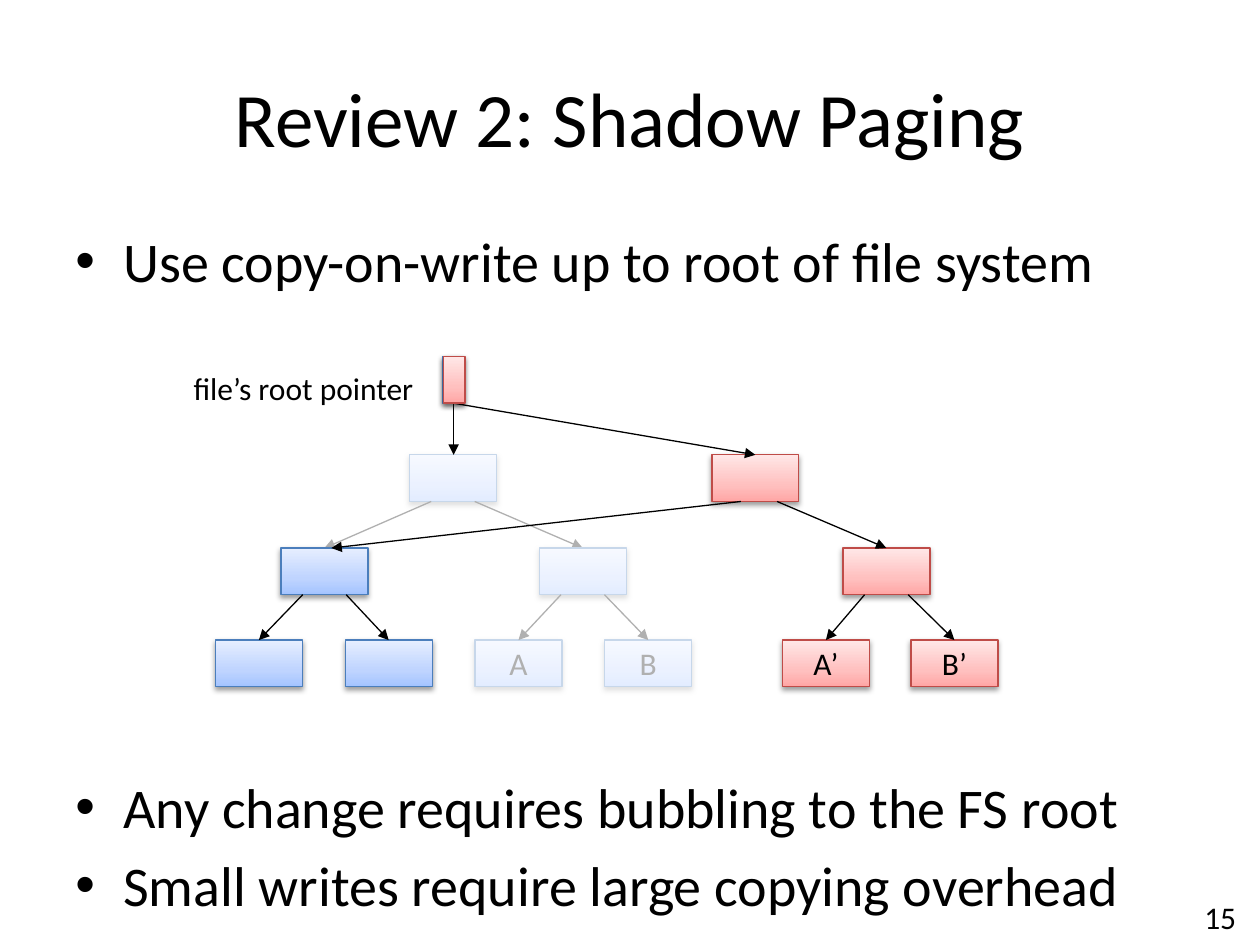
import pptx
import pptx.util
import pptx.dml.color
import pptx.enum.shapes
import pptx.enum.text
import pptx.oxml
import pptx.oxml.ns
from lxml import etree

Inches = pptx.util.Inches
Pt = pptx.util.Pt
RGBColor = pptx.dml.color.RGBColor
Align = pptx.enum.text.PP_ALIGN
Anchor = pptx.enum.text.MSO_ANCHOR
qn = pptx.oxml.ns.qn

FONT = "Calibri"
BLACK = RGBColor(0x00, 0x00, 0x00)
WHITE = RGBColor(0xFF, 0xFF, 0xFF)

# Palettes: border, then gradient from bottom to top
BLUE = (RGBColor(0x4B, 0x7E, 0xBC),
        (RGBColor(0xA4, 0xC4, 0xFF), RGBColor(0xBF, 0xD4, 0xFF), RGBColor(0xE6, 0xEE, 0xFF)))
RED = (RGBColor(0xBF, 0x4C, 0x48),
       (RGBColor(0xFF, 0xA6, 0xA5), RGBColor(0xFF, 0xC0, 0xBF), RGBColor(0xFF, 0xE7, 0xE7)))
GRADIENT_POSITIONS = (0, 35000, 100000)

# Tree geometry in inches; level 0 holds the root pointer
LEVEL_TOPS = (2.83, 3.61, 4.35, 5.08)
NODE_WIDTH, NODE_HEIGHT = 0.69, 0.37
POINTER_WIDTH = 0.17
POINTER_CENTER = 3.6


def write_paragraph(paragraph, text, size, alignment):
    paragraph.text = text
    paragraph.alignment = alignment
    paragraph.font.name = FONT
    paragraph.font.size = Pt(size)
    paragraph.font.color.rgb = BLACK


def add_bullet(paragraph):
    properties = paragraph._p.get_or_add_pPr()
    properties.set("marL", str(Inches(0.38)))
    properties.set("indent", str(-Inches(0.38)))
    spacing = etree.Element(qn("a:spcBef"))
    etree.SubElement(spacing, qn("a:spcPct"), val="20000")
    properties.insert(0, spacing)
    spacing.addnext(etree.Element(qn("a:buFont"), typeface="Arial"))
    spacing.getnext().addnext(etree.Element(qn("a:buChar"), char="•"))


def add_text(slide, box, lines, size, alignment=Align.LEFT,
             anchor=Anchor.TOP, bullets=False, wrap=True):
    frame = slide.shapes.add_textbox(*map(Inches, box)).text_frame
    frame.word_wrap = wrap
    frame.vertical_anchor = anchor
    for index, line in enumerate(lines):
        paragraph = frame.add_paragraph() if index else frame.paragraphs[0]
        write_paragraph(paragraph, line, size, alignment)
        if bullets:
            add_bullet(paragraph)


def add_rectangle(slide, left, top, width, height):
    shape = slide.shapes.add_shape(
        pptx.enum.shapes.MSO_SHAPE.RECTANGLE, *map(Inches, (left, top, width, height)))
    shape.shadow.inherit = False
    return shape


def fill_gradient(shape, colors):
    shape.fill.gradient()
    shape.fill.gradient_angle = 90
    stops = shape._element.spPr.find(".//" + qn("a:gsLst"))
    stops.clear()
    for position, color in zip(GRADIENT_POSITIONS, colors):
        stop = etree.SubElement(stops, qn("a:gs"), pos=str(position))
        etree.SubElement(stop, qn("a:srgbClr"), val=str(color))


def add_shadow(shape):
    effects = shape._element.spPr.find(qn("a:effectLst"))
    shadow = etree.SubElement(effects, qn("a:outerShdw"), blurRad=str(Pt(3.1)),
                              dist=str(Pt(1.6)), dir="5400000", rotWithShape="0")
    color = etree.SubElement(shadow, qn("a:srgbClr"), val=str(BLACK))
    etree.SubElement(color, qn("a:alpha"), val="38000")


def add_node(slide, left, level, palette, label="", width=NODE_WIDTH):
    border, colors = palette
    shape = add_rectangle(slide, left, LEVEL_TOPS[level], width, NODE_HEIGHT)
    fill_gradient(shape, colors)
    shape.line.color.rgb = border
    shape.line.width = Pt(0.75)
    add_shadow(shape)
    if label:
        shape.text_frame.vertical_anchor = Anchor.MIDDLE
        write_paragraph(shape.text_frame.paragraphs[0], label, 18, Align.CENTER)


def add_arrow(slide, start_x, level, end_x):
    """Arrow from the bottom of one level to the top of the next."""
    connector = slide.shapes.add_connector(
        pptx.enum.shapes.MSO_CONNECTOR.STRAIGHT,
        Inches(start_x), Inches(LEVEL_TOPS[level] + NODE_HEIGHT),
        Inches(end_x), Inches(LEVEL_TOPS[level + 1]))
    connector.line.color.rgb = BLACK
    connector.line.width = Pt(0.75)
    etree.SubElement(connector.line._get_or_add_ln(), qn("a:tailEnd"), type="triangle")
    etree.SubElement(connector._element.spPr, qn("a:effectLst"))


def add_branch(slide, parent, level, fraction, child):
    add_arrow(slide, parent + fraction * NODE_WIDTH, level, child + NODE_WIDTH / 2)


def add_subtree(slide, parent, children, palette, labels=("", "")):
    """Level 2 node with its two leaves."""
    add_node(slide, parent, 2, palette)
    for child, label, fraction in zip(children, labels, (0.25, 0.75)):
        add_node(slide, child, 3, palette, label)
        add_branch(slide, parent, 2, fraction, child)


def add_veil(slide):
    veil = add_rectangle(slide, 2.29, 3.58, 3.42, 2.17)
    veil.fill.solid()
    veil.fill.fore_color.rgb = WHITE
    color = veil._element.spPr.find(".//" + qn("a:srgbClr"))
    etree.SubElement(color, qn("a:alpha"), val="69000")
    veil.line.fill.background()


def add_tree(slide):
    old_root, new_root = 3.25, 5.65
    kept, replaced, new = 2.23, 4.28, 6.69

    # Old version, faded by the veil
    add_node(slide, old_root, 1, BLUE)
    add_branch(slide, old_root, 1, 0.25, kept)
    add_branch(slide, old_root, 1, 0.75, replaced)
    add_subtree(slide, replaced, (3.77, 4.8), BLUE, ("A", "B"))
    add_veil(slide)

    # Shared and copied subtrees
    add_subtree(slide, kept, (1.71, 2.74), BLUE)
    add_subtree(slide, new, (6.21, 7.23), RED, ("A’", "B’"))

    # New root
    add_node(slide, new_root, 1, RED)
    add_branch(slide, new_root, 1, 0.75, new)
    add_arrow(slide, new_root + NODE_WIDTH / 3, 1, 2.63)

    # Root pointer, before and after the write
    add_node(slide, 3.51, 0, BLUE, width=POINTER_WIDTH)
    add_arrow(slide, POINTER_CENTER, 0, POINTER_CENTER)
    add_arrow(slide, POINTER_CENTER, 0, new_root + NODE_WIDTH / 2)
    add_node(slide, 3.52, 0, RED, width=POINTER_WIDTH)
    add_text(slide, (1.41, 2.88, 1.97, 0.4), ["file’s root pointer"], 18, Align.RIGHT, wrap=False)


def main():
    presentation = pptx.Presentation()
    presentation.slide_width = Inches(10)
    presentation.slide_height = Inches(7.5)
    slide = presentation.slides.add_slide(presentation.slide_layouts[6])

    # Title and first point
    add_text(slide, (0.5, 0.3, 9, 1.25), ["Review 2: Shadow Paging"], 44,
             Align.CENTER, Anchor.MIDDLE)
    add_text(slide, (0.5, 1.75, 9, 0.75),
             ["Use copy-on-write up to root of file system"], 32, bullets=True)

    add_tree(slide)

    # Closing points and page number
    add_text(slide, (0.5, 6.08, 9.08, 1.25),
             ["Any change requires bubbling to the FS root",
              "Small writes require large copying overhead"], 32, bullets=True)
    add_text(slide, (7.58, 7.08, 2.33, 0.4), ["15"], 18, Align.RIGHT)

    presentation.save("out.pptx")


if __name__ == "__main__":
    main()
